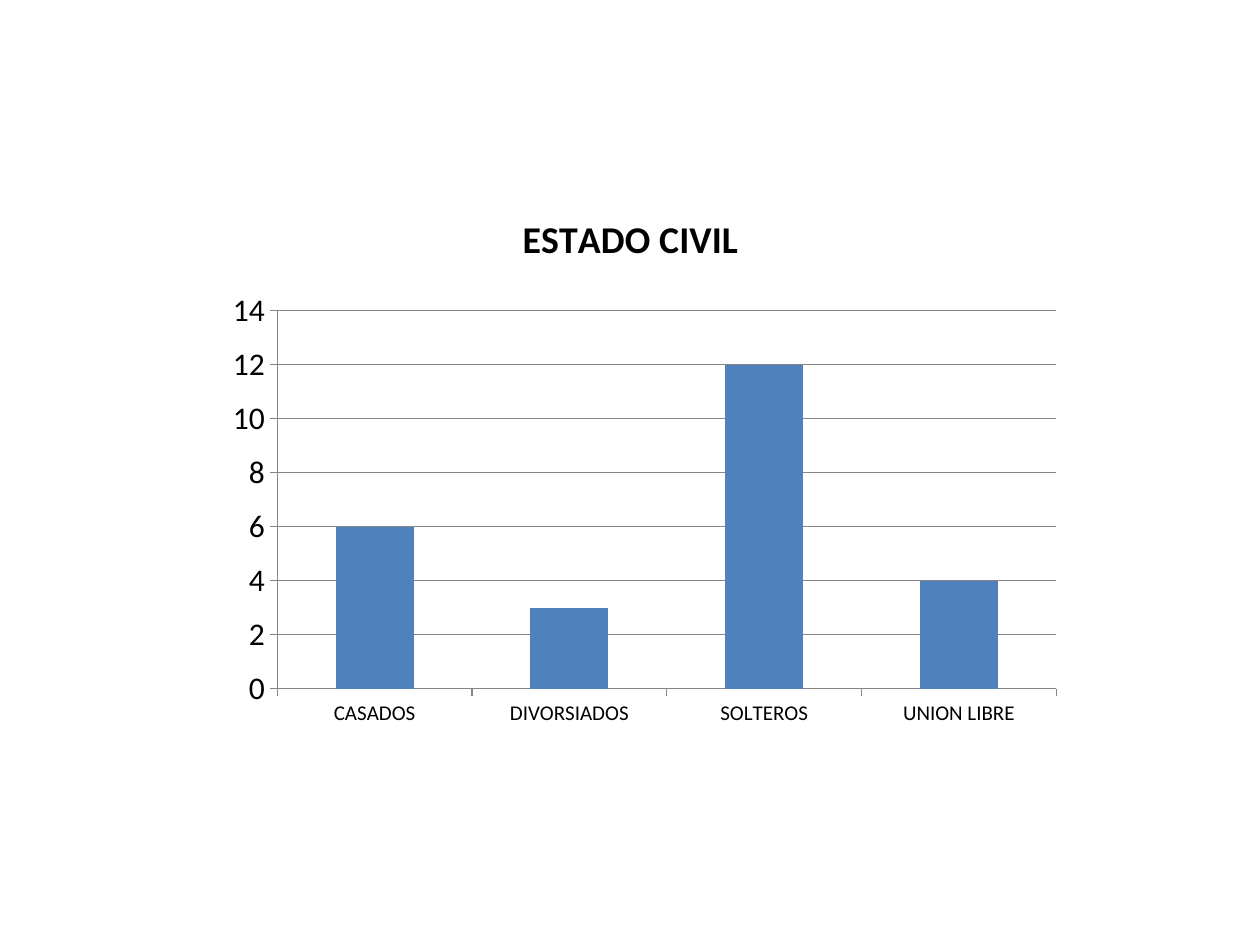
import pptx
import pptx.chart.data
import pptx.dml.color
import pptx.enum.chart
import pptx.oxml
import pptx.oxml.ns
import pptx.util


def colour(hex_code):
    return pptx.dml.color.RGBColor.from_string(hex_code)


def apply(target, values):
    for name, value in values.items():
        setattr(target, name, value)


class Deck:
    font = "Calibri"
    text = "000000"
    rule = "868686"
    bar = "4F81BD"

    def __init__(self, width, height):
        self.presentation = pptx.Presentation()
        apply(self.presentation, {
            "slide_width": pptx.util.Inches(width),
            "slide_height": pptx.util.Inches(height),
        })
        self.slide = None

    def add_slide(self):
        blank = self.presentation.slide_layouts[6]
        self.slide = self.presentation.slides.add_slide(blank)

    def set_font(self, font, size, bold=False):
        apply(font, {"name": self.font, "size": pptx.util.Pt(size), "bold": bold})
        font.color.rgb = colour(self.text)

    def set_line(self, line):
        line.color.rgb = colour(self.rule)
        line.width = pptx.util.Pt(0.75)

    def set_plot_area(self, chart, **shares):
        edges = "".join(f'<c:{edge} val="{share}"/>' for edge, share in shares.items())
        layout = pptx.oxml.parse_xml(
            f'<c:layout {pptx.oxml.ns.nsdecls("c")}><c:manualLayout>'
            '<c:layoutTarget val="inner"/><c:xMode val="edge"/><c:yMode val="edge"/>'
            f"{edges}</c:manualLayout></c:layout>"
        )
        plot_area = chart._chartSpace.chart.plotArea
        for previous in plot_area.findall(pptx.oxml.ns.qn("c:layout")):
            plot_area.remove(previous)
        plot_area.insert(0, layout)

    def add_column_chart(self, title, counts, left, top, width, height):
        data = pptx.chart.data.CategoryChartData()
        data.categories = list(counts)
        data.add_series(title, list(counts.values()))
        across, down = self.presentation.slide_width, self.presentation.slide_height
        chart = self.slide.shapes.add_chart(
            pptx.enum.chart.XL_CHART_TYPE.COLUMN_CLUSTERED,
            int(left * across), int(top * down),
            int(width * across), int(height * down), data,
        ).chart
        apply(chart, {"has_legend": False, "has_title": True})
        self.set_font(chart.font, 18)

        chart.chart_title.include_in_layout = False
        heading = chart.chart_title.text_frame
        heading.text = title
        self.set_font(heading.paragraphs[0].runs[0].font, 21.6, bold=True)

        apply(chart.plots[0], {"gap_width": 150, "vary_by_categories": False})
        columns = chart.plots[0].series[0].format.fill
        columns.solid()
        columns.fore_color.rgb = colour(self.bar)

        for axis, size in ((chart.category_axis, 12), (chart.value_axis, 18)):
            apply(axis, {
                "major_tick_mark": pptx.enum.chart.XL_TICK_MARK.OUTSIDE,
                "minor_tick_mark": pptx.enum.chart.XL_TICK_MARK.NONE,
            })
            self.set_font(axis.tick_labels.font, size)
            self.set_line(axis.format.line)
        apply(chart.value_axis, {
            "minimum_scale": 0, "maximum_scale": 14, "major_unit": 2,
            "has_major_gridlines": True,
        })
        self.set_line(chart.value_axis.major_gridlines.format.line)
        return chart


def main():
    deck = Deck(10, 7.5)
    deck.add_slide()
    marital_status = deck.add_column_chart(
        "ESTADO CIVIL",
        {"CASADOS": 6, "DIVORSIADOS": 3, "SOLTEROS": 12, "UNION LIBRE": 4},
        left=1.41 / 10, top=1.48 / 7.5, width=7.19 / 10, height=4.69 / 7.5,
    )
    deck.set_plot_area(marital_status, x=0.11, y=0.21, w=0.86, h=0.64)
    deck.presentation.save("out.pptx")


if __name__ == "__main__":
    main()
